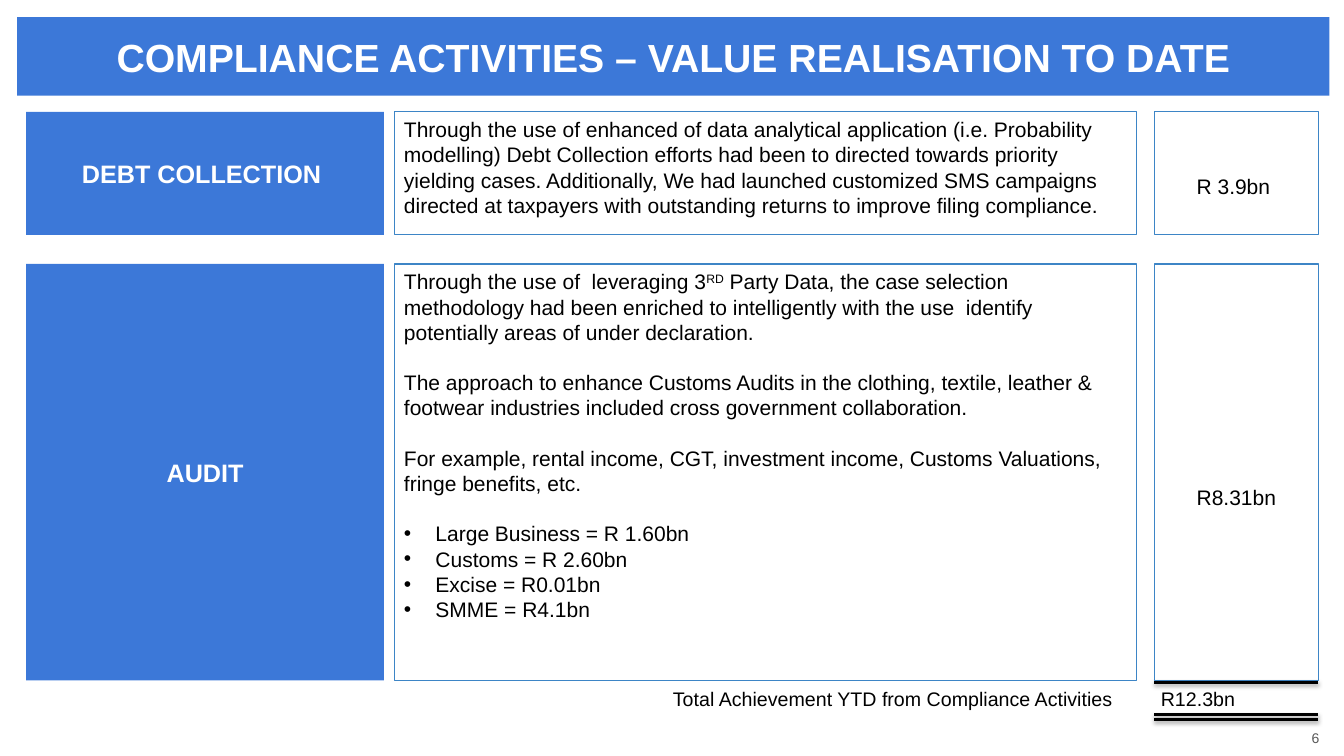
from lxml import etree
from pptx import Presentation
from pptx.dml.color import RGBColor
from pptx.enum.shapes import MSO_CONNECTOR as CONN, MSO_SHAPE as SHAPE
from pptx.enum.text import MSO_ANCHOR as ANCHOR, PP_ALIGN as ALIGN
from pptx.oxml.ns import qn
from pptx.util import Pt

BLUE, BORDER, BLACK, WHITE, GREY = "3C78D8", "3D85C6", "000000", "FFFFFF", "595959"
LABEL_COL, BODY_COL, VALUE_COL = (18.7, 255.6), (281.5, 530.6), (824.4, 117.4)
DEBT_ROW, AUDIT_ROW = (79.9, 88), (188.6, 297.4)
TEXT_SIZE = 15
BLANK_LINE = 18
WIDE = (7.2, 3.6, 7.2, 3.6)
NARROW = (5, 2.9, 5, 2.9)

DEBT_TEXT = (
    "Through the use of enhanced of data analytical application (i.e. Probability "
    "modelling) Debt Collection efforts had been to directed towards priority yielding "
    "cases. Additionally, We had launched customized SMS campaigns directed at taxpayers "
    "with outstanding returns to improve filing compliance."
)
AUDIT_INTRO = (
    "Through the use of  leveraging 3",
    "RD",
    " Party Data, the case selection methodology had been enriched to intelligently "
    "with the use  identify potentially areas of under declaration.",
)
AUDIT_PARAGRAPHS = (
    "The approach to enhance Customs Audits in the clothing, textile, leather & "
    "footwear industries included cross government collaboration.",
    "For example, rental income, CGT, investment income, Customs Valuations, "
    "fringe benefits, etc.",
)
AUDIT_VALUES = (
    "Large Business = R 1.60bn",
    "Customs = R 2.60bn",
    "Excise = R0.01bn",
    "SMME = R4.1bn",
)


def rgb(color):
    return RGBColor.from_string(color)


def add_run(p, text, size=TEXT_SIZE, color=BLACK, bold=False):
    r = p.add_run()
    r.text = text
    r.font.name = "Arial"
    r.font.size = Pt(size)
    r.font.bold = bold
    r.font.color.rgb = rgb(color)
    return r


def set_frame(sp, insets, anchor):
    tf = sp.text_frame
    tf.word_wrap = True
    tf.vertical_anchor = anchor
    tf.margin_left, tf.margin_top, tf.margin_right, tf.margin_bottom = map(Pt, insets)
    p = tf.paragraphs[0]
    p.alignment = ALIGN.LEFT
    return p


def add_box(s, col, row, insets=WIDE, anchor=ANCHOR.MIDDLE, fill=None):
    """Add a filled or outlined box and return its first paragraph."""
    (left, width), (top, height) = col, row
    sp = s.shapes.add_shape(SHAPE.RECTANGLE, Pt(left), Pt(top), Pt(width), Pt(height))
    sp.shadow.inherit = False
    if fill:
        sp.fill.solid()
        sp.fill.fore_color.rgb = rgb(fill)
        sp.line.fill.background()
    else:
        sp.fill.background()
        sp.line.color.rgb = rgb(BORDER)
        sp.line.width = Pt(0.75)
    return set_frame(sp, insets, anchor), sp.text_frame


def add_heading(s, col, row, text, size=18):
    p, _ = add_box(s, col, row, NARROW, fill=BLUE)
    p.alignment = ALIGN.CENTER
    add_run(p, text, size, WHITE, bold=True)


def add_value(s, row, text, insets=WIDE, spacing=1):
    p, _ = add_box(s, VALUE_COL, row, insets)
    p.alignment = ALIGN.CENTER
    p.line_spacing = spacing
    add_run(p, text)


def add_text(s, left, top, width, height, text, size, color, insets, anchor):
    box = s.shapes.add_textbox(Pt(left), Pt(top), Pt(width), Pt(height))
    p = set_frame(box, insets, anchor)
    add_run(p, text, size, color)
    return p


def set_bullet(p):
    pPr = p._p.get_or_add_pPr()
    pPr.set("marL", str(Pt(22.5)))
    pPr.set("indent", str(-Pt(22.5)))
    etree.SubElement(pPr, qn("a:buFont")).set("typeface", "Arial")
    etree.SubElement(pPr, qn("a:buChar")).set("char", "•")


def set_tab(p, position):
    tabs = etree.SubElement(p._p.get_or_add_pPr(), qn("a:tabLst"))
    tab = etree.SubElement(tabs, qn("a:tab"))
    tab.set("pos", str(Pt(position)))
    tab.set("algn", "l")


def add_rule(s, y):
    """Add a black total rule with a soft shadow below it."""
    left, width = VALUE_COL
    line = s.shapes.add_connector(CONN.STRAIGHT, Pt(left), Pt(y), Pt(left + width), Pt(y))
    line.line.color.rgb = rgb(BLACK)
    line.line.width = Pt(2)
    effects = etree.SubElement(line._element.spPr, qn("a:effectLst"))
    shadow = etree.SubElement(
        effects, qn("a:outerShdw"), blurRad=str(Pt(3.1)), dist=str(Pt(1.6)),
        dir="5400000", rotWithShape="0",
    )
    color = etree.SubElement(shadow, qn("a:srgbClr"), val=BLACK)
    etree.SubElement(color, qn("a:alpha"), val="38000")


def add_audit_details(s):
    p, tf = add_box(s, BODY_COL, AUDIT_ROW, anchor=ANCHOR.TOP)
    before, ordinal, after = AUDIT_INTRO
    add_run(p, before)
    add_run(p, ordinal).font._element.set("baseline", "30000")
    add_run(p, after)
    for text in AUDIT_PARAGRAPHS:
        p = tf.add_paragraph()
        p.alignment = ALIGN.LEFT
        p.space_before = Pt(BLANK_LINE)
        add_run(p, text)
    for i, text in enumerate(AUDIT_VALUES):
        p = tf.add_paragraph()
        p.alignment = ALIGN.LEFT
        p.space_before = Pt(0 if i else BLANK_LINE)
        set_bullet(p)
        add_run(p, text)


def main():
    prs = Presentation()
    prs.slide_width, prs.slide_height = Pt(960), Pt(540)
    s = prs.slides.add_slide(prs.slide_layouts[6])

    add_heading(s, (12.2, 937.4), (12.2, 56.2),
                "COMPLIANCE ACTIVITIES – VALUE REALISATION TO DATE", 28)

    add_heading(s, LABEL_COL, DEBT_ROW, "DEBT COLLECTION ")
    p, _ = add_box(s, BODY_COL, DEBT_ROW, anchor=ANCHOR.TOP)
    add_run(p, DEBT_TEXT)
    add_value(s, DEBT_ROW, "R 3.9bn ", spacing=2)

    add_heading(s, LABEL_COL, AUDIT_ROW, "AUDIT")
    add_audit_details(s)
    add_value(s, AUDIT_ROW, "R8.31bn", (7.2, 3.6 + 2 * BLANK_LINE, 7.2, 3.6))

    p = add_text(s, 461.5, 487.4, 480.3, 24.5,
                 "Total Achievement YTD from Compliance Activities\tR12.3bn",
                 14, BLACK, (19.2, 3.6, 7.2, 3.6), ANCHOR.TOP)
    set_tab(p, 348.5)
    for y in (487.4, 510.5, 514.1):
        add_rule(s, y)

    p = add_text(s, 923, 514.8, 26.6, 25.2, "6", 10, GREY, (7.2,) * 4, ANCHOR.MIDDLE)
    p.alignment = ALIGN.RIGHT

    prs.save("out.pptx")


if __name__ == "__main__":
    main()
